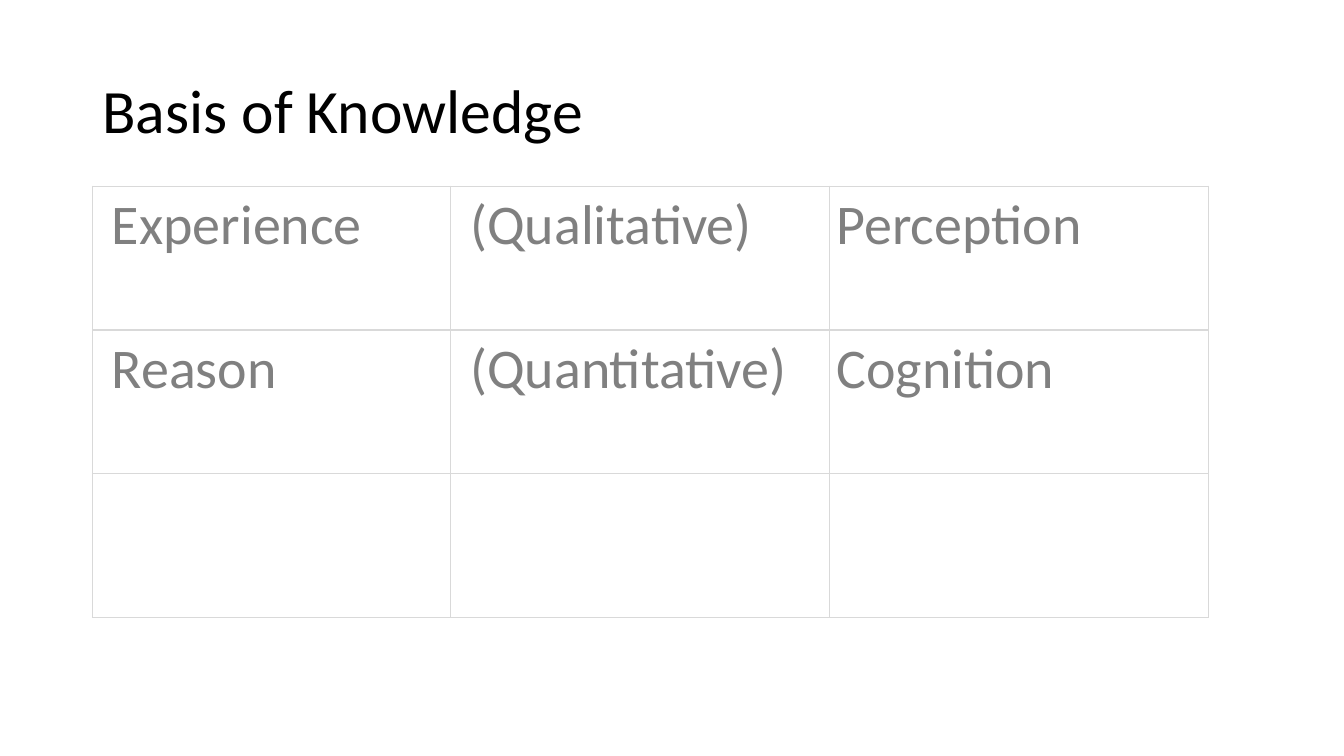
import pptx
import pptx.util
import pptx.dml.color
import pptx.enum.text
import lxml.etree
import pptx.oxml.ns

Pt = pptx.util.Pt
RGBColor = pptx.dml.color.RGBColor
qn = pptx.oxml.ns.qn

BLACK = RGBColor(0x00, 0x00, 0x00)
GRAY = RGBColor(0x80, 0x80, 0x80)
BORDER = RGBColor(0xD9, 0xD9, 0xD9)

TITLE = "Basis of Knowledge"
ROWS = [
    ("Experience", "(Qualitative)", "Perception"),
    ("Reason", "(Quantitative)", "Cognition"),
    ("", "", ""),
]
COL_WIDTHS = [256, 270.5, 270.5]
COL_INSETS = [14, 14, 5]
ROW_HEIGHT = 102.7
LEFT, TOP = 66, 133


def write(tf, text, size, color, spacing):
    p = tf.paragraphs[0]
    p.alignment = pptx.enum.text.PP_ALIGN.LEFT
    p.line_spacing = spacing
    r = p.add_run()
    r.text = text
    r.font.name = "Calibri"
    r.font.size = Pt(size)
    r.font.color.rgb = color


def add_borders(cell):
    tc_pr = cell._tc.get_or_add_tcPr()
    for i, side in enumerate(("a:lnL", "a:lnR", "a:lnT", "a:lnB")):
        ln = lxml.etree.Element(qn(side), w=str(Pt(1)))
        fill = lxml.etree.SubElement(ln, qn("a:solidFill"))
        lxml.etree.SubElement(fill, qn("a:srgbClr"), val=str(BORDER))
        tc_pr.insert(i, ln)


def main():
    prs = pptx.Presentation()
    prs.slide_width, prs.slide_height = Pt(960), Pt(540)
    s = prs.slides.add_slide(prs.slide_layouts[5])

    title = s.shapes.title
    title.left, title.top, title.width, title.height = Pt(66), Pt(29), Pt(828), Pt(104)
    title.text_frame.vertical_anchor = pptx.enum.text.MSO_ANCHOR.MIDDLE
    write(title.text_frame, TITLE, size=44, color=BLACK, spacing=0.9)

    table = s.shapes.add_table(
        len(ROWS), len(COL_WIDTHS), Pt(LEFT), Pt(TOP),
        Pt(sum(COL_WIDTHS)), Pt(ROW_HEIGHT * len(ROWS))).table
    table.first_row = table.horz_banding = False
    for col, width in zip(table.columns, COL_WIDTHS):
        col.width = Pt(width)
    for row, texts in zip(table.rows, ROWS):
        row.height = Pt(ROW_HEIGHT)
        for cell, text, inset in zip(row.cells, texts, COL_INSETS):
            cell.fill.background()
            cell.margin_left, cell.margin_right = Pt(inset), Pt(5)
            cell.margin_top = cell.margin_bottom = 0
            add_borders(cell)
            if text:
                write(cell.text_frame, text, size=40, color=GRAY, spacing=1.07)

    prs.save("out.pptx")


if __name__ == "__main__":
    main()
